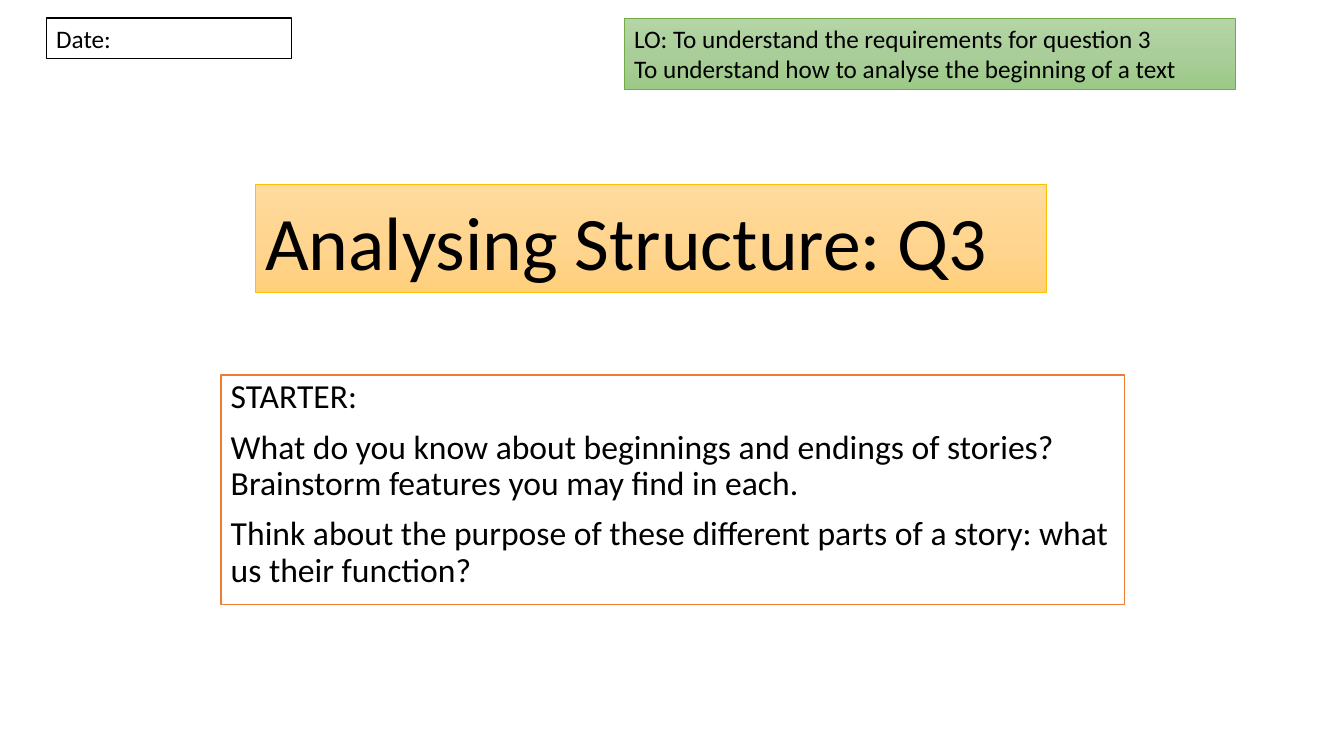
from copy import deepcopy
from dataclasses import dataclass

from pptx import Presentation
from pptx.dml.color import RGBColor
from pptx.enum.text import MSO_ANCHOR, MSO_AUTO_SIZE, PP_ALIGN
from pptx.oxml.ns import qn
from pptx.shapes.autoshape import Shape
from pptx.slide import Slide
from pptx.util import Inches, Pt

SLIDE_WIDTH, SLIDE_HEIGHT = Inches(13.33), Inches(7.5)


@dataclass(frozen=True)
class Panel:
    """A bordered block of text, placed in percent of the slide's size."""

    left: float
    top: float
    width: float
    height: float
    lines: tuple[str, ...]
    size: float
    fills: tuple[str, ...]
    border: str
    border_width: float = 1
    line_spacing: float = 1.0
    space_before: float = 0
    anchor: MSO_ANCHOR = MSO_ANCHOR.TOP
    wraps: bool = True
    grows: bool = False


HEADING = Panel(18.98, 24.4, 58.89, 14.27, ("Analysing Structure: Q3",), 54,
                ("FFDB9E", "FFD590", "FFD07C"), "FFC000", 0.5,
                line_spacing=0.9, anchor=MSO_ANCHOR.BOTTOM)
STARTER = Panel(
    16.43, 49.6, 67.22, 30.4,
    ("STARTER:",
     "What do you know about beginnings and endings of stories? "
     "Brainstorm features you may find in each.",
     "Think about the purpose of these different parts of a story: "
     "what us their function?"),
    24, ("FFFFFF",), "ED7D31", line_spacing=0.9, space_before=10)
DATE = Panel(3.45, 2.4, 18.23, 5.33, ("Date:",), 18, ("FFFFFF",), "000000",
             wraps=False, grows=True)
OBJECTIVES = Panel(
    46.44, 2.4, 45.46, 9.47,
    ("LO: To understand the requirements for question 3",
     "To understand how to analyse the beginning of a text"),
    18, ("B5D5A7", "AACE9A", "9CC987"), "70AD47", 0.5, grows=True)


def colour(value: str) -> RGBColor:
    """Turn a hex string into a colour."""
    return RGBColor.from_string(value)


def bounds(panel: Panel) -> tuple[int, int, int, int]:
    """Turn a panel's percentages into slide lengths."""
    return (int(SLIDE_WIDTH * panel.left / 100), int(SLIDE_HEIGHT * panel.top / 100),
            int(SLIDE_WIDTH * panel.width / 100), int(SLIDE_HEIGHT * panel.height / 100))


def paint(shape: Shape, panel: Panel) -> None:
    """Apply the panel's fill, running downwards if graded, and its border."""
    if len(panel.fills) == 1:
        shape.fill.solid()
        shape.fill.fore_color.rgb = colour(panel.fills[0])
    else:
        shape.fill.gradient()
        shape.fill.gradient_angle = 270
        first_stop = next(shape.element.iter(qn("a:gs")))
        for _ in panel.fills[2:]:
            first_stop.addnext(deepcopy(first_stop))
        for index, stop in enumerate(shape.fill.gradient_stops):
            stop.position = index / (len(panel.fills) - 1)
            stop.color.rgb = colour(panel.fills[index])
    shape.line.color.rgb = colour(panel.border)
    shape.line.width = Pt(panel.border_width)


def write(shape: Shape, panel: Panel) -> None:
    """Set and format the panel's paragraphs."""
    frame = shape.text_frame
    frame.text = "\n".join(panel.lines)
    frame.word_wrap = panel.wraps
    frame.auto_size = MSO_AUTO_SIZE.SHAPE_TO_FIT_TEXT if panel.grows else MSO_AUTO_SIZE.NONE
    frame.vertical_anchor = panel.anchor
    for index, paragraph in enumerate(frame.paragraphs):
        paragraph.alignment = PP_ALIGN.LEFT
        paragraph.line_spacing = panel.line_spacing
        paragraph.space_before = Pt(panel.space_before if index else 0)
        for run in paragraph.runs:
            run.font.name = "Calibri"
            run.font.size = Pt(panel.size)
            run.font.color.rgb = colour("000000")


def dress(shape: Shape, panel: Panel) -> None:
    """Place, paint and fill in one panel."""
    shape.left, shape.top, shape.width, shape.height = bounds(panel)
    paint(shape, panel)
    write(shape, panel)


def build(slide: Slide) -> None:
    """Draw the heading and the text panels."""
    dress(slide.shapes.title, HEADING)
    for panel in (STARTER, DATE, OBJECTIVES):
        dress(slide.shapes.add_textbox(*bounds(panel)), panel)


def main() -> None:
    """Create and save the presentation."""
    presentation = Presentation()
    presentation.slide_width, presentation.slide_height = SLIDE_WIDTH, SLIDE_HEIGHT
    build(presentation.slides.add_slide(presentation.slide_layouts[5]))
    presentation.save("out.pptx")


if __name__ == "__main__":
    main()
